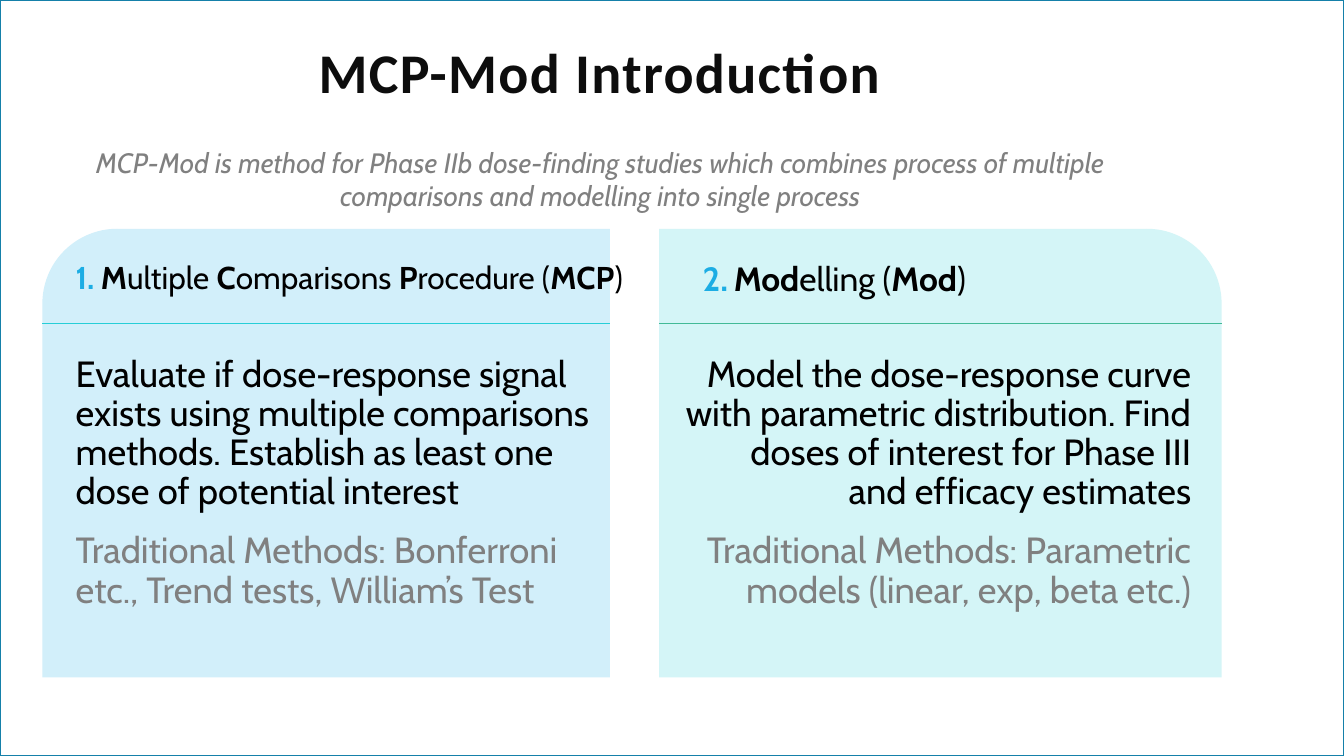
from dataclasses import dataclass

from lxml import etree
from pptx import Presentation
from pptx import util as u
from pptx.dml.color import RGBColor
from pptx.enum import shapes, text
from pptx.oxml.ns import qn

SLIDE_W, SLIDE_H = u.Inches(13.33), u.Inches(7.5)
COLS = ROWS = 100
CARD_TOP, CARD_ROWS, RULE_ROW = 30.27, 59.33, 42.8
HEADING_TOP, HEADING_ROWS = 34, 9.87
BODY_TOP, BODY_ROWS = 46.4, 40.6
LEFT, CENTER, RIGHT = text.PP_ALIGN.LEFT, text.PP_ALIGN.CENTER, text.PP_ALIGN.RIGHT


@dataclass(frozen=True)
class Theme:
    frame: str = "1580A9"
    title: str = "0D0D0D"
    ink: str = "000000"
    muted: str = "808080"
    number: str = "1CADE4"
    title_font: str = "Calibri"
    body_font: str = "Cabin"
    title_size: float = 40
    subtitle_size: float = 20
    body_size: float = 26


THEME = Theme()


@dataclass(frozen=True)
class Step:
    """One card; edges are (first column, column count), * toggles bold in the heading."""
    number: int
    heading: str
    heading_size: float
    heading_indent: float
    task: str
    methods: str
    card: tuple
    heading_edges: tuple
    body_edges: tuple
    fill: str
    rule: str
    align: text.PP_ALIGN
    mirrored: bool


STEPS = (
    Step(1, "*M*ultiple *C*omparisons *P*rocedure (*MCP*)", 22.5, 0.25,
         "Evaluate if dose-response signal exists using multiple comparisons methods. "
         "Establish as least one dose of potential interest",
         "Traditional Methods: Bonferroni etc., Trend tests, William’s Test",
         (3.15, 42.22), (5.25, 42.22), (5.25, 39.45), "D2EFFA", "27CED7", LEFT, False),
    Step(2, "*Mod*elling (*Mod*)", 24, 0.31,
         "Model the dose-response curve with parametric distribution. "
         "Find doses of interest for Phase III and efficacy estimates",
         "Traditional Methods: Parametric models (linear, exp, beta etc.)",
         (49.05, 41.85), (51.9, 37.35), (50.63, 38.4), "D4F5F7", "42BA97", RIGHT, True),
)


def col(count):
    return round(SLIDE_W * count / COLS)


def row(count):
    return round(SLIDE_H * count / ROWS)


def color(code):
    return RGBColor.from_string(code)


def style(font, size, ink, name=THEME.body_font, bold=False, italic=False):
    font.size, font.name, font.bold, font.italic = u.Pt(size), name, bold, italic
    font.color.rgb = color(ink)


def add_frame(slide):
    frame = slide.shapes.add_shape(shapes.MSO_SHAPE.RECTANGLE, 0, 0, SLIDE_W, SLIDE_H)
    frame.shadow.inherit = False
    frame.fill.background()
    frame.line.color.rgb = color(THEME.frame)
    frame.line.width = u.Pt(1.25)


def add_text_area(slide, edges, top, rows, inset=None):
    """Return the frame of a wrapping text box placed on the grid."""
    area = slide.shapes.add_textbox(col(edges[0]), row(top), col(edges[1]), row(rows))
    frame = area.text_frame
    frame.word_wrap = True
    if inset is not None:
        frame.margin_left = frame.margin_right = u.Inches(inset)
        frame.margin_top = frame.margin_bottom = u.Inches(inset)
    return frame


def add_title(slide, wording):
    frame = add_text_area(slide, (7.2, 74.85), -0.67, 21.87)
    frame.vertical_anchor = text.MSO_ANCHOR.MIDDLE
    frame.text = wording
    title = frame.paragraphs[0]
    title.alignment, title.line_spacing = CENTER, 0.8
    run = title.runs[0]
    style(run.font, THEME.title_size, THEME.title, THEME.title_font, bold=True)
    run.font._element.set("spc", "100")


def add_subtitle(slide, wording):
    frame = add_text_area(slide, (2.93, 83.48), 18.53, 10.27)
    frame.text = wording
    frame.paragraphs[0].alignment = CENTER
    style(frame.paragraphs[0].runs[0].font, THEME.subtitle_size, THEME.muted, italic=True)


def number_paragraph(paragraph, number, indent):
    props = paragraph._p.get_or_add_pPr()
    props.set("marL", str(u.Inches(indent)))
    props.set("indent", str(-u.Inches(indent)))
    bullet_color = etree.SubElement(props, qn("a:buClr"))
    etree.SubElement(bullet_color, qn("a:srgbClr"), val=THEME.number)
    etree.SubElement(props, qn("a:buFont"), typeface=THEME.body_font)
    etree.SubElement(props, qn("a:buAutoNum"), type="arabicPeriod", startAt=str(number))


def add_card(slide, step):
    card = slide.shapes.add_shape(
        shapes.MSO_SHAPE.SNIP_ROUND_RECTANGLE,
        col(step.card[0]), row(CARD_TOP), col(step.card[1]), row(CARD_ROWS))
    card.adjustments[0], card.adjustments[1] = 1 / 6, 0
    card.shadow.inherit = False
    card.fill.solid()
    card.fill.fore_color.rgb = color(step.fill)
    card.line.fill.background()
    if step.mirrored:
        card._element.spPr.find(qn("a:xfrm")).set("flipH", "1")


def add_heading(slide, step):
    frame = add_text_area(slide, step.heading_edges, HEADING_TOP, HEADING_ROWS, 0.05)
    heading = frame.paragraphs[0]
    number_paragraph(heading, step.number, step.heading_indent)
    heading.line_spacing, heading.space_after = 0.9, u.Pt(2)
    for index, part in enumerate(step.heading.split("*")):
        if part:
            run = heading.add_run()
            run.text = part
            style(run.font, step.heading_size, THEME.ink, bold=index % 2 == 1)
    # The number takes its weight from the first run, so step 1 opens with a light space.
    if not step.mirrored:
        lead = heading.add_run()
        lead.text = "\u200b"
        style(lead.font, step.heading_size, THEME.ink)
        heading.runs[0]._r.addprevious(lead._r)


def add_body(slide, step):
    frame = add_text_area(slide, step.body_edges, BODY_TOP, BODY_ROWS, 0.05)
    frame.text = f"{step.task}\n{step.methods}"
    for paragraph, ink in zip(frame.paragraphs, (THEME.ink, THEME.muted)):
        paragraph.alignment = step.align
        paragraph.line_spacing, paragraph.space_after = 0.9, u.Pt(2)
        style(paragraph.runs[0].font, THEME.body_size, ink)
    frame.paragraphs[1].space_before = u.Pt(12)


def add_rule(slide, step):
    start, width = step.card
    rule = slide.shapes.add_connector(
        shapes.MSO_CONNECTOR.STRAIGHT,
        col(start), row(RULE_ROW), col(start + width), row(RULE_ROW))
    rule.line.color.rgb = color(step.rule)
    rule.line.width = u.Pt(0.75)
    etree.SubElement(rule._element.spPr, qn("a:effectLst"))


def main():
    deck = Presentation()
    deck.slide_width, deck.slide_height = SLIDE_W, SLIDE_H
    slide = deck.slides.add_slide(deck.slide_layouts[6])
    add_frame(slide)
    add_title(slide, "MCP-Mod Introduction")
    add_subtitle(slide, "MCP-Mod is method for Phase IIb dose-finding studies which combines "
                        "process of multiple comparisons and modelling into single process")
    for step in STEPS:
        add_card(slide, step)
        add_heading(slide, step)
        add_body(slide, step)
        add_rule(slide, step)
    deck.save("out.pptx")


if __name__ == "__main__":
    main()
